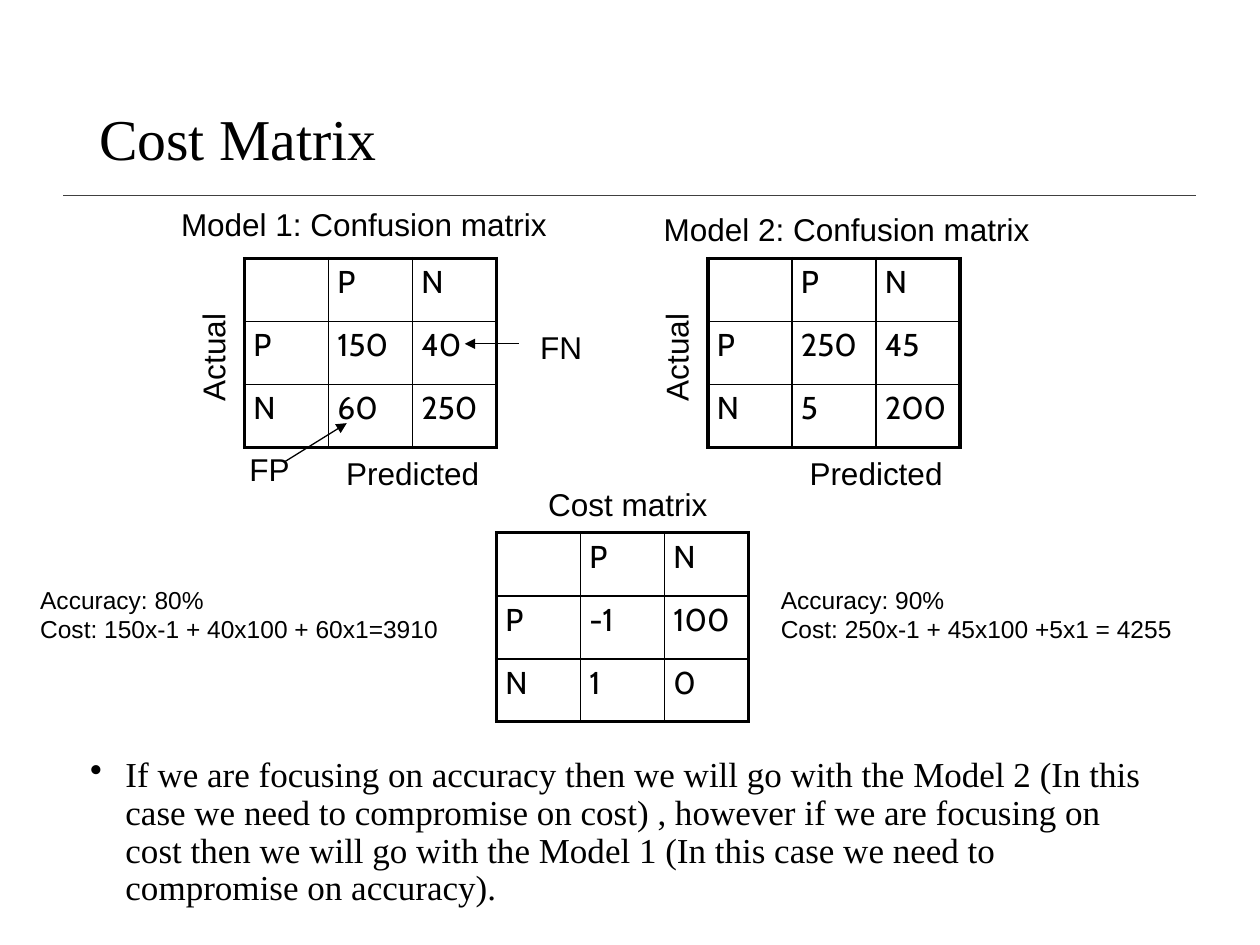
"""Build a slide weighing two confusion matrices against a cost matrix."""
import dataclasses

import lxml.etree
import pptx
import pptx.dml.color
import pptx.enum.shapes
import pptx.enum.text
import pptx.oxml.ns
import pptx.util

Cm = pptx.util.Cm
Pt = pptx.util.Pt
qn = pptx.oxml.ns.qn


@dataclasses.dataclass(frozen=True)
class Theme:
    ink: str = "000000"
    rule: str = "404040"
    serif: str = "Times New Roman"
    sans: str = "Arial"
    table: str = "Cabin"
    title: int = 33
    body: int = 20
    label: int = 18
    note: int = 14
    outer: float = 2.25
    inner: float = 1


class SlideBuilder:
    def __init__(self, slide, theme):
        self.s = slide
        self.theme = theme

    def run(self, p, text, size, font):
        r = p.add_run()
        r.text = text
        r.font.size = Pt(size)
        r.font.name = font
        r.font.color.rgb = pptx.dml.color.RGBColor.from_string(self.theme.ink)

    def text(self, box, lines, size, font, wrap=True, rotation=0):
        sp = self.s.shapes.add_textbox(*map(Cm, box))
        sp.rotation = rotation
        tf = sp.text_frame
        tf.word_wrap = wrap
        for i, line in enumerate(lines):
            p = tf.add_paragraph() if i else tf.paragraphs[0]
            self.run(p, line, size, font)
        return tf

    def label(self, x, y, width, text, rotation=0):
        self.text((x, y, width, 1.02), [text], self.theme.label, self.theme.sans,
                  wrap=False, rotation=rotation)

    def title(self, box, text):
        tf = self.text(box, [text], self.theme.title, self.theme.serif)
        tf.vertical_anchor = pptx.enum.text.MSO_ANCHOR.MIDDLE
        tf.paragraphs[0].line_spacing = 0.9

    def bullet(self, box, text):
        tf = self.text(box, [text], self.theme.body, self.theme.serif)
        p = tf.paragraphs[0]
        p.line_spacing = 0.9
        p.space_before = Pt(7.5)
        pPr = p._p.get_or_add_pPr()
        pPr.set("marL", str(Cm(0.71)))
        pPr.set("indent", str(-Cm(0.71)))
        lxml.etree.SubElement(pPr, qn("a:buChar")).set("char", "•")

    def line(self, start, end, color, width, arrow=False):
        cx = self.s.shapes.add_connector(
            pptx.enum.shapes.MSO_CONNECTOR.STRAIGHT, *map(Cm, start + end))
        cx.line.color.rgb = pptx.dml.color.RGBColor.from_string(color)
        cx.line.width = Pt(width)
        if arrow:
            ln = cx.line._get_or_add_ln()
            lxml.etree.SubElement(ln, qn("a:tailEnd")).set("type", "triangle")
        lxml.etree.SubElement(cx._element.spPr, qn("a:effectLst"))

    def arrow(self, start, end):
        self.line(start, end, self.theme.ink, 0.75, arrow=True)

    def border(self, cell, side, width):
        ln = lxml.etree.SubElement(cell._tc.get_or_add_tcPr(), qn(f"a:ln{side}"))
        ln.set("w", str(Pt(width)))
        fill = lxml.etree.SubElement(ln, qn("a:solidFill"))
        lxml.etree.SubElement(fill, qn("a:srgbClr")).set("val", self.theme.ink)

    def matrix(self, x, y, values):
        rows = [["", "P", "N"], ["P", *values[0]], ["N", *values[1]]]
        n = len(rows)
        tbl = self.s.shapes.add_table(n, n, Cm(x), Cm(y), Cm(5.08), Cm(3.81)).table
        tbl.first_row = tbl.horz_banding = False
        for i, row in enumerate(rows):
            for j, value in enumerate(row):
                cell = tbl.cell(i, j)
                cell.margin_left = cell.margin_right = Cm(0.18)
                cell.margin_top = cell.margin_bottom = Cm(0.1)
                edges = {"L": j == 0, "R": j == n - 1, "T": i == 0, "B": i == n - 1}
                for side, outer in edges.items():
                    self.border(cell, side, self.theme.outer if outer else self.theme.inner)
                cell.fill.background()
                if value:
                    self.run(cell.text_frame.paragraphs[0], value,
                             self.theme.label, self.theme.table)

    def model(self, x, values):
        self.matrix(x, 5.21, values)
        self.label(x + 1.8, 9.02, 3.23, "Predicted")
        self.label(x - 1.78, 6.68, 2.29, "Actual", rotation=270)

    def note(self, x, width, lines):
        self.text((x, 11.66, width, 1.45), lines, self.theme.note, self.theme.sans)


def main():
    prs = pptx.Presentation()
    prs.slide_width, prs.slide_height = Cm(25.4), Cm(19.05)
    theme = Theme()
    b = SlideBuilder(prs.slides.add_slide(prs.slide_layouts[6]), theme)

    b.line((1.27, 3.94), (24.1, 3.94), theme.rule, 1)
    b.title((1.75, 1.02, 21.89, 3.68), "Cost Matrix")

    b.model(4.93, [("150", "40"), ("60", "250")])
    b.label(3.4, 4.01, 8.13, "Model 1: Confusion matrix")
    b.model(14.27, [("250", "45"), ("5", "200")])
    b.label(13.13, 4.11, 8.13, "Model 2: Confusion matrix")
    b.matrix(10.01, 10.74, [("-1", "100"), ("1", "0")])
    b.label(10.8, 9.65, 3.76, "Cost matrix")

    b.arrow((10.46, 6.93), (9.37, 6.93))
    b.label(10.64, 6.48, 1.37, "FN")
    b.arrow((5.72, 9.32), (6.99, 8.53))
    b.label(4.78, 8.94, 1.32, "FP")

    b.note(0.56, 9.37, ["Accuracy: 80%", "Cost: 150x-1 + 40x100 + 60x1=3910"])
    b.note(15.49, 9.3, ["Accuracy: 90%", "Cost: 250x-1 + 45x100 +5x1 = 4255"])
    b.bullet((1.57, 15.14, 21.89, 3.58),
             "If we are focusing on accuracy then we will go with the Model 2 "
             "(In this case we need to compromise on cost) , however if we are "
             "focusing on cost then we will go with the Model 1 "
             "(In this case we need to compromise on accuracy).")
    prs.save("out.pptx")


if __name__ == "__main__":
    main()
